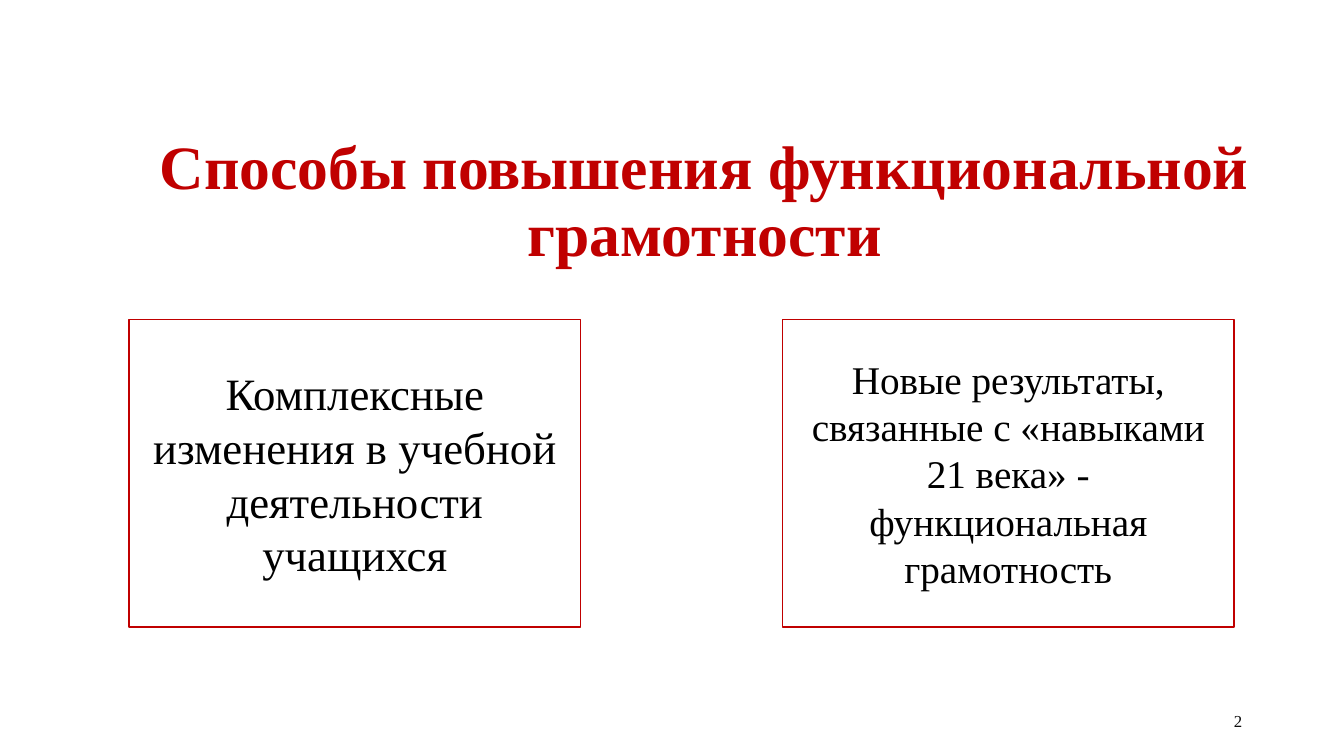
from dataclasses import dataclass

from pptx import Presentation
from pptx.dml.color import RGBColor as Rgb
from pptx.enum import shapes, text
from pptx.util import Inches, Pt


@dataclass(frozen=True)
class Theme:
    font: str = "Times New Roman"
    red: Rgb = Rgb(0xC0, 0, 0)
    ink: Rgb = Rgb(0, 0, 0)
    gray: Rgb = Rgb(0x0D, 0x0D, 0x0D)
    title: int = 44
    large: int = 32
    body: int = 28
    small: int = 12


THEME = Theme()


def write(shape, words, size, color, align=text.PP_ALIGN.CENTER, bold=False):
    """Fill a shape with one vertically centred paragraph and return it."""
    frame = shape.text_frame
    frame.word_wrap = True
    frame.auto_size = text.MSO_AUTO_SIZE.NONE
    frame.vertical_anchor = text.MSO_ANCHOR.MIDDLE
    para = frame.paragraphs[0]
    para.alignment = align
    run = para.add_run()
    run.text = words
    font = run.font
    font.name, font.size, font.bold = THEME.font, Pt(size), bold
    font.color.rgb = color
    return para


def add_title(slide, words):
    title = slide.shapes.title
    title.left, title.top = Inches(1.1), Inches(0.95)
    title.width, title.height = Inches(11.78), Inches(2.8)
    para = write(title, words, THEME.title, THEME.red, bold=True)
    para.line_spacing = 0.9
    # Lifts the heading clear of the cards below
    title.text_frame.margin_bottom = Inches(0.72)


def add_card(slide, left, words, size):
    card = slide.shapes.add_shape(
        shapes.MSO_SHAPE.RECTANGLE,
        Inches(left), Inches(3.17), Inches(4.48), Inches(3.05))
    card.shadow.inherit = False
    card.fill.background()
    card.line.color.rgb = THEME.red
    card.line.width = Pt(1)
    write(card, words, size, THEME.ink)


def add_number(slide, words):
    box = slide.shapes.add_textbox(
        Inches(9.42), Inches(6.95), Inches(3), Inches(0.4))
    write(box, words, THEME.small, THEME.gray, text.PP_ALIGN.RIGHT)


def main():
    deck = Presentation()
    deck.slide_width, deck.slide_height = Inches(13.33), Inches(7.5)
    slide = deck.slides.add_slide(deck.slide_layouts.get_by_name("Title Only"))
    add_title(slide, "Способы повышения функциональной грамотности")
    add_number(slide, "2")
    add_card(slide, 1.28,
             "Комплексные изменения в учебной деятельности учащихся",
             THEME.large)
    add_card(slide, 7.76,
             "Новые результаты, связанные с «навыками 21 века» - "
             "функциональная грамотность",
             THEME.body)
    deck.save("out.pptx")


if __name__ == "__main__":
    main()
